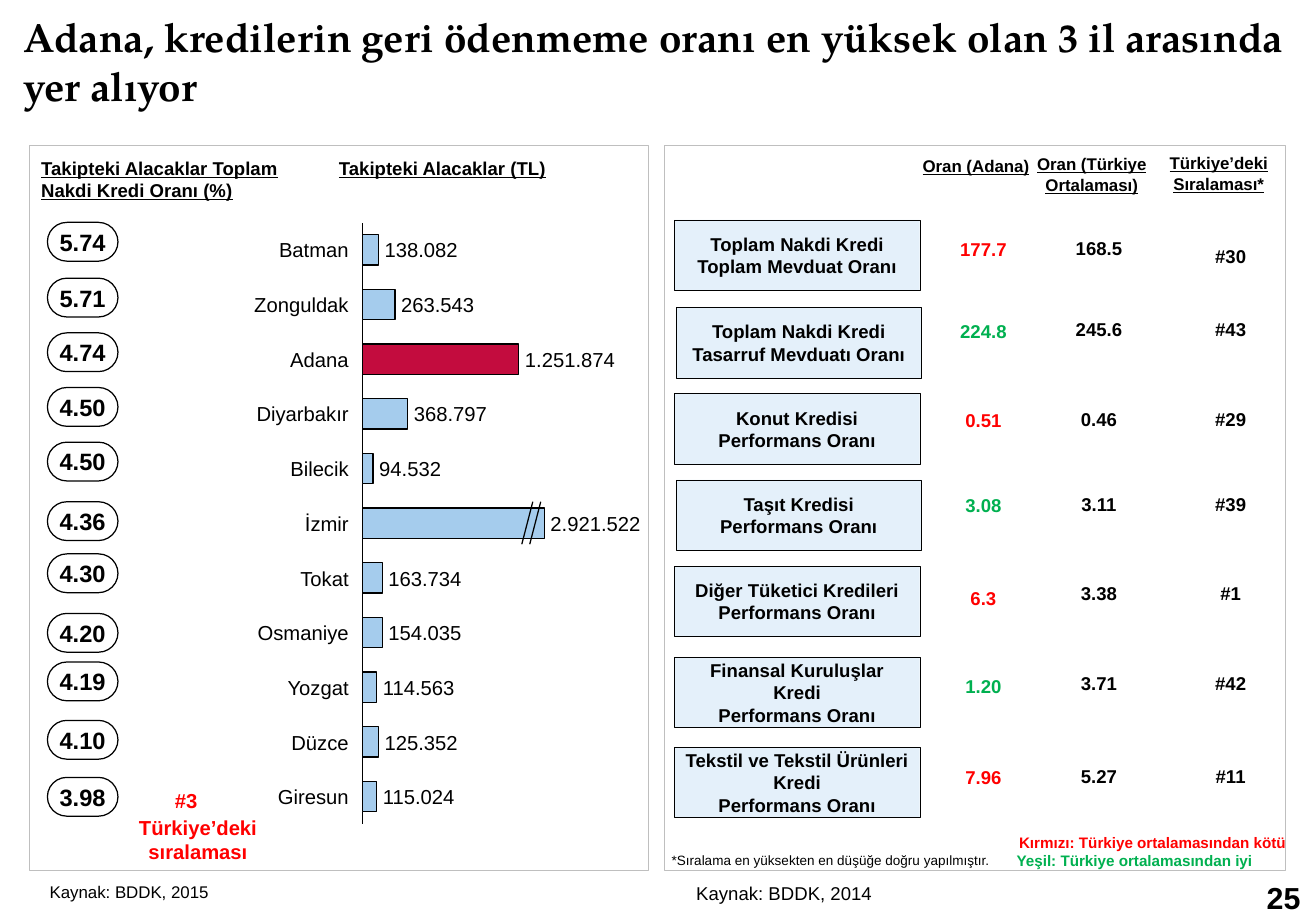
from dataclasses import dataclass
from lxml import etree
from pptx import Presentation
from pptx.chart import data as chart_data
from pptx.dml.color import RGBColor
from pptx.enum import chart as charts, shapes, text
from pptx.oxml import ns
from pptx.util import Pt


@dataclass(frozen=True)
class Theme:
    black: str = "000000"
    white: str = "FFFFFF"
    frame: str = "BFBFBF"
    bar: str = "A5CCED"
    highlight: str = "C30C3E"
    label_fill: str = "E4F0FA"
    worse: str = "FF0000"
    better: str = "00B050"
    body_font: str = "Arial"
    title_font: str = "TeX Gyre Pagella"
    title: int = 24
    page: int = 18
    pill: int = 14
    chart: int = 12
    body: int = 11
    head: int = 10
    legend: int = 9
    note: int = 8


T = Theme()
LEFT, CENTER, RIGHT = text.PP_ALIGN.LEFT, text.PP_ALIGN.CENTER, text.PP_ALIGN.RIGHT
MIDDLE = text.MSO_ANCHOR.MIDDLE
LINE = 0.75

# city, bar length, amount, ratio, top of the ratio pill
CITIES = [
    ("Batman", 9, "138.082", "5.74", 45.4),
    ("Zonguldak", 18, "263.543", "5.71", 78.5),
    ("Adana", 86, "1.251.874", "4.74", 110.9),
    ("Diyarbakır", 25, "368.797", "4.50", 143.3),
    ("Bilecik", 6, "94.532", "4.50", 175.7),
    ("İzmir", 100, "2.921.522", "4.36", 211),
    ("Tokat", 11, "163.734", "4.30", 241.9),
    ("Osmaniye", 11, "154.035", "4.20", 277.2),
    ("Yozgat", 8, "114.563", "4.19", 306),
    ("Düzce", 9, "125.352", "4.10", 340.6),
    ("Giresun", 8, "115.024", "3.98", 374.4),
]

# label, (left, top) of its box, then (value, top) for Adana, Türkiye and rank
RATIOS = [
    ("Toplam Nakdi Kredi\nToplam Mevduat Oranı", (5.8, 43.9),
     ("177.7", 51.1), ("168.5", 50.4), ("#30", 55.4), T.worse),
    ("Toplam Nakdi Kredi\nTasarruf Mevduatı Oranı", (6.8, 95.8),
     ("224.8", 99.4), ("245.6", 98.6), ("#43", 98.6), T.better),
    ("Konut Kredisi\nPerformans Oranı", (5.8, 146.9),
     ("0.51", 152.6), ("0.46", 151.9), ("#29", 151.9), T.worse),
    ("Taşıt Kredisi\nPerformans Oranı", (6.8, 198),
     ("3.08", 203), ("3.11", 202.3), ("#39", 202.3), T.better),
    ("Diğer Tüketici Kredileri\nPerformans Oranı", (5.8, 249.1),
     ("6.3", 257.8), ("3.38", 254.9), ("#1", 254.9), T.worse),
    ("Finansal Kuruluşlar\nKredi\nPerformans Oranı", (5.8, 303.1),
     ("1.20", 310.3), ("3.71", 308.2), ("#42", 308.2), T.better),
    ("Tekstil ve Tekstil Ürünleri\nKredi\nPerformans Oranı", (5.8, 356.4),
     ("7.96", 364.3), ("5.27", 363.6), ("#11", 363.6), T.worse),
]


def rgb(color):
    return RGBColor.from_string(color)


def points(*lengths):
    return [Pt(v) for v in lengths]


def write(sp, words, size, color=T.black, bold=False, underline=False,
          align=LEFT, anchor=text.MSO_ANCHOR.TOP, inset=None, font=T.body_font):
    """Fill a shape's text frame and format every run alike."""
    tf = sp.text_frame
    tf.text = words
    tf.word_wrap = True
    tf.auto_size = text.MSO_AUTO_SIZE.NONE
    tf.vertical_anchor = anchor
    if inset is not None:
        tf.margin_left = tf.margin_right = Pt(inset)
        tf.margin_top = tf.margin_bottom = 0
    for p in tf.paragraphs:
        p.alignment = align
        for r in p.runs:
            r.font.name, r.font.size = font, Pt(size)
            r.font.bold, r.font.underline = bold, underline
            r.font.color.rgb = rgb(color)
    return tf


def add_text(s, box, words, size, **style):
    return write(s.shapes.add_textbox(*points(*box)), words, size, **style)


def add_box(s, box, kind=shapes.MSO_SHAPE.RECTANGLE, fill=None, line=T.black, width=LINE):
    sp = s.shapes.add_shape(kind, *points(*box))
    sp.shadow.inherit = False
    if fill:
        sp.fill.solid()
        sp.fill.fore_color.rgb = rgb(fill)
    else:
        sp.fill.background()
    sp.line.color.rgb, sp.line.width = rgb(line), Pt(width)
    return sp


def add_line(s, x1, y1, x2, y2):
    c = s.shapes.add_connector(shapes.MSO_CONNECTOR.STRAIGHT, *points(x1, y1, x2, y2))
    c.line.color.rgb, c.line.width = rgb(T.black), Pt(LINE)
    etree.SubElement(c._element.spPr, ns.qn("a:effectLst"))


def set_plot_area(chart, **fractions):
    """Fix the inner plot area as fractions of the chart frame."""
    area = chart._chartSpace.chart.plotArea
    for old in area.findall(ns.qn("c:layout")):
        area.remove(old)
    layout = etree.Element(ns.qn("c:layout"))
    manual = etree.SubElement(layout, ns.qn("c:manualLayout"))
    settings = {"layoutTarget": "inner", "xMode": "edge", "yMode": "edge", **fractions}
    for tag, value in settings.items():
        etree.SubElement(manual, ns.qn("c:" + tag)).set("val", str(value))
    area.insert(0, layout)


def add_bars(s, box):
    data = chart_data.CategoryChartData()
    data.categories = [city[0] for city in CITIES]
    data.add_series("Takipteki Alacaklar", [city[1] for city in CITIES])
    chart = s.shapes.add_chart(charts.XL_CHART_TYPE.BAR_STACKED, *points(*box), data).chart
    chart.has_legend = chart.has_title = False
    chart.font.name, chart.font.size = T.body_font, Pt(T.head)
    chart.font.color.rgb = rgb(T.black)
    cat, val = chart.category_axis, chart.value_axis
    cat.reverse_order = True
    cat.tick_label_position = charts.XL_TICK_LABEL_POSITION.NONE
    cat.major_tick_mark = cat.minor_tick_mark = charts.XL_TICK_MARK.NONE
    cat.format.line.color.rgb, cat.format.line.width = rgb(T.black), Pt(LINE)
    val.minimum_scale, val.maximum_scale = 0, 100
    val.has_major_gridlines = val.visible = False
    plot = chart.plots[0]
    plot.gap_width, plot.overlap, plot.vary_by_categories = 80, 100, False
    bars = plot.series[0]
    adana = bars.points[[city[0] for city in CITIES].index("Adana")]
    for part, color in ((bars, T.bar), (adana, T.highlight)):
        part.format.fill.solid()
        part.format.fill.fore_color.rgb = rgb(color)
        part.format.line.color.rgb, part.format.line.width = rgb(T.black), Pt(LINE)
    set_plot_area(chart, x=0.054, y=0.018, w=0.892, h=0.965)


def add_cities_panel(s, box):
    x, y, w, h = box
    add_box(s, box, line=T.frame)
    head = dict(size=T.body, bold=True, underline=True)
    add_text(s, (x, y + 2.9, 182, 34), "Takipteki Alacaklar Toplam Nakdi Kredi Oranı (%)", **head)
    add_text(s, (x + 176.4, y + 2.9, 182, 21), "Takipteki Alacaklar (TL)", **head)
    chart_x, chart_y, chart_w, chart_h = x + 190.8, y + 38.9, 121, 369.4
    add_bars(s, (chart_x, chart_y, chart_w, chart_h))
    axis_x, full_bar = chart_x + 0.054 * chart_w, 0.892 * chart_w
    pitch = 0.965 * chart_h / len(CITIES)
    for i, (city, length, amount, ratio, pill_y) in enumerate(CITIES):
        row_y = chart_y + 0.018 * chart_h + (i + 0.5) * pitch - 7.2
        add_text(s, (x + 119.4, row_y, 70, 14.4), city, T.chart,
                 align=RIGHT, anchor=MIDDLE, inset=0)
        add_text(s, (axis_x + full_bar * length / 100 + 2.2, row_y, 62, 14.4), amount,
                 T.chart, anchor=MIDDLE, inset=1.4)
        pill = add_box(s, (x + 10.8, y + pill_y, 41.8, 23),
                       shapes.MSO_SHAPE.ROUNDED_RECTANGLE, T.white)
        pill.adjustments[0] = 0.5
        write(pill, ratio, T.pill, bold=True, align=CENTER, anchor=MIDDLE, inset=0)
    for slash_x in (298.4, 303.1):
        add_line(s, x + slash_x, y + 211, x + slash_x - 6.5, y + 236.2)
    rank = dict(size=T.chart, color=T.worse, bold=True)
    add_text(s, (x + 79.2, y + 377.3, 49, 21.6), "#3", **rank)
    add_text(s, (x + 44.6, y + 393.1, 110.9, 36), "Türkiye’deki sıralaması", align=CENTER, **rank)


def add_ratios_panel(s, box):
    x, y, w, h = box
    add_box(s, box, line=T.frame)
    heads = [(143.4, 2.2, 82, "Oran (Adana)"),
             (209.5, 1.4, 87.1, "Oran (Türkiye Ortalaması)"),
             (284.4, 0.7, 87.8, "Türkiye’deki Sıralaması*")]
    for dx, dy, width, words in heads:
        add_text(s, (x + dx, y + dy, width, 32), words, T.head,
                 bold=True, underline=True, align=CENTER)
    for label, (dx, dy), *cells, adana_color in RATIOS:
        sp = add_box(s, (x + dx, y + dy, 145.4, 41.8), fill=T.label_fill, width=0.25)
        write(sp, label, T.body, bold=True, align=CENTER, anchor=MIDDLE, inset=2)
        colors = (adana_color, T.black, T.black)
        for (value, top), left, color in zip(cells, (165.5, 234, 312), colors):
            add_text(s, (x + left, y + top, 46.8, 21), value, T.body,
                     color=color, bold=True, align=CENTER)
    add_text(s, (x - 2.9, y + 415.4, 258.5, 17),
             "*Sıralama en yüksekten en düşüğe doğru yapılmıştır.", T.note)
    tf = add_text(s, (x + 116.6, y + 403.9, 258.5, 28.8),
                  "Kırmızı: Türkiye ortalamasından kötü\nYeşil: Türkiye ortalamasından iyi",
                  T.legend, color=T.worse, bold=True, align=RIGHT)
    p = tf.paragraphs[1]
    p.alignment = CENTER
    p._p.get_or_add_pPr().set("marL", str(Pt(65)))
    p.runs[0].font.color.rgb = rgb(T.better)


def add_title(s, box):
    sp = s.shapes.title
    sp.left, sp.top, sp.width, sp.height = points(*box)
    write(sp, "Adana, kredilerin geri ödenmeme oranı en yüksek olan 3 il arasında yer alıyor",
          T.title, bold=True, inset=0, font=T.title_font)


def add_footer(s, box):
    x, y, w, h = box
    add_text(s, (x + 22.3, y, 300, h), "Kaynak: BDDK, 2015", T.head)
    add_text(s, (x + 405.4, y, 162, h), "Kaynak: BDDK, 2014", T.body)
    add_text(s, (x + w - 44.6, y - 1.4, 42.5, h), "25", T.page, bold=True, align=RIGHT)


def main():
    prs = Presentation()
    prs.slide_width, prs.slide_height = points(779.76, 540)
    s = prs.slides.add_slide(prs.slide_layouts[5])
    add_title(s, (13.7, 7.2, 755.3, 56.2))
    add_cities_panel(s, (17.3, 86.4, 367.2, 429.8))
    add_ratios_panel(s, (393.8, 86.4, 367.9, 429.8))
    add_footer(s, (0, 519.1, 779.76, 20.9))
    prs.save("out.pptx")


if __name__ == "__main__":
    main()
